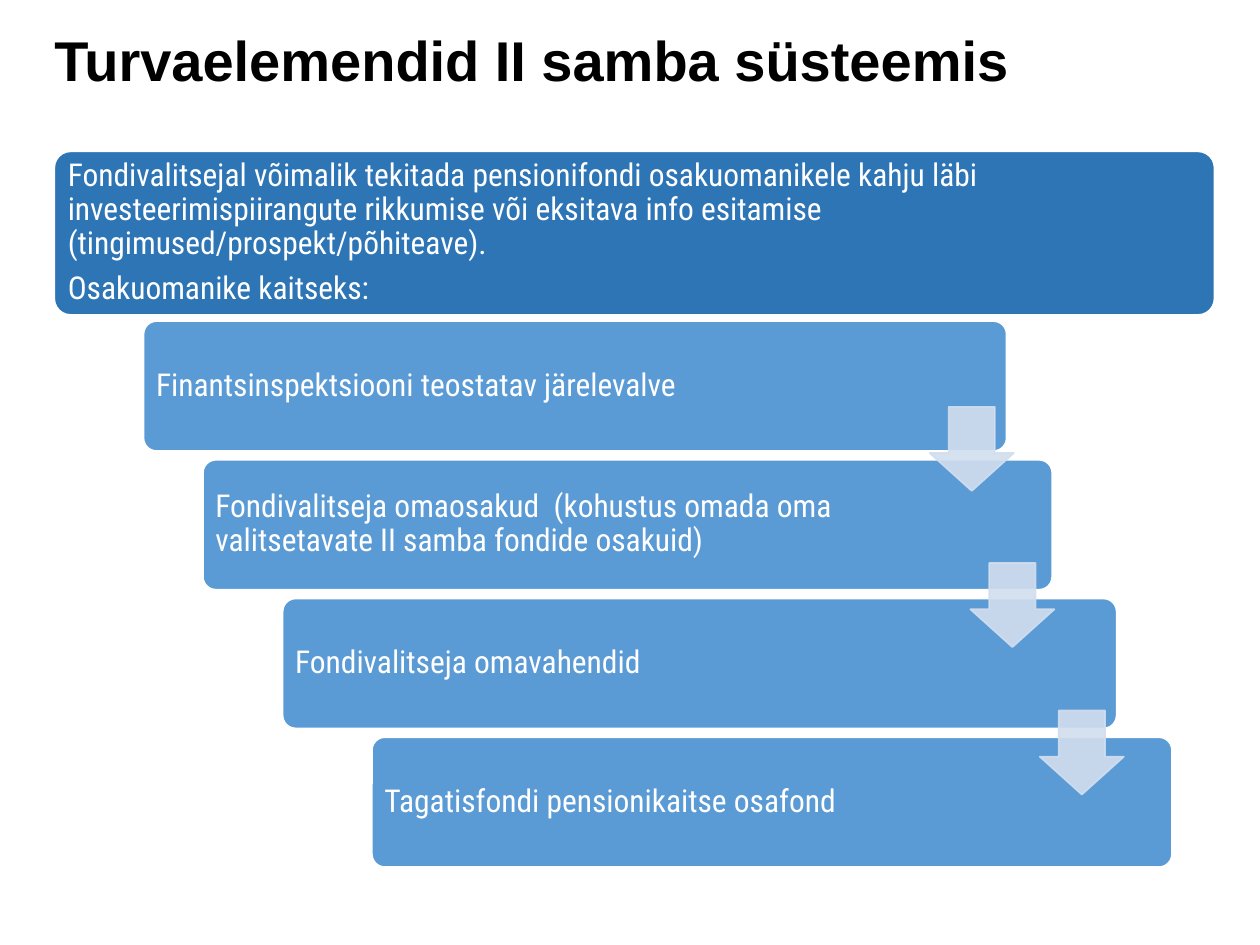
from dataclasses import dataclass

import pptx
import pptx.dml.color
import pptx.enum.shapes
import pptx.enum.text
import pptx.oxml.ns
import pptx.util
from lxml import etree

Pt = pptx.util.Pt
SHAPES = pptx.enum.shapes.MSO_SHAPE
ANCHORS = pptx.enum.text.MSO_ANCHOR


@dataclass(frozen=True)
class Theme:
    heading_font: str = "Arial"
    body_font: str = "Roboto Condensed"
    heading_size: float = 32
    body_size: float = 18
    black: str = "000000"
    white: str = "FFFFFF"
    risk_blue: str = "2E75B6"
    step_blue: str = "5B9BD5"
    arrow_blue: str = "D2DEEF"
    arrow_opacity: int = 90


THEME = Theme()

RISK = [
    "Fondivalitsejal võimalik tekitada pensionifondi osakuomanikele kahju läbi "
    "investeerimispiirangute rikkumise või eksitava info esitamise "
    "(tingimused/prospekt/põhiteave).",
    "Osakuomanike kaitseks:",
]

# Text, indent and width of each step, then the arrow's offset inside it.
SAFEGUARDS = [
    ("Finantsinspektsiooni teostatav järelevalve", 51, 493.2, (449.3, 49)),
    ("Fondivalitseja omaosakud  (kohustus omada oma valitsetavate II samba fondide osakuid)",
     85, 485.3, (438.5, 59)),
    ("Fondivalitseja omavahendid", 130.5, 476.6, (432.7, 64)),
    ("Tagatisfondi pensionikaitse osafond", 181.5, 457.2, None),
]


def rgb(value):
    return pptx.dml.color.RGBColor.from_string(value)


def write(frame, paragraphs, font, size, color, spacing, bold=False):
    frame.word_wrap = True
    frame.text = "\n".join(paragraphs)
    for paragraph in frame.paragraphs:
        paragraph.alignment = pptx.enum.text.PP_ALIGN.LEFT
        paragraph.line_spacing = spacing
        for run in paragraph.runs:
            run.font.name = font
            run.font.size = Pt(size)
            run.font.bold = bold
            run.font.color.rgb = rgb(color)


def add_filled(slide, preset, box, adjustments, fill, line):
    shape = slide.shapes.add_shape(preset, *map(Pt, box))
    for index, value in enumerate(adjustments):
        shape.adjustments[index] = value
    shape.shadow.inherit = False
    shape.fill.solid()
    shape.fill.fore_color.rgb = rgb(fill)
    shape.line.color.rgb = rgb(line)
    shape.line.width = Pt(1)
    return shape


def add_title(slide, box):
    title = slide.shapes.add_textbox(*map(Pt, box)).text_frame
    title.margin_left = title.margin_right = title.margin_bottom = 0
    title.margin_top = Pt(4.5)
    write(title, ["Turvaelemendid II samba süsteemis"], THEME.heading_font,
          THEME.heading_size, THEME.black, 0.88, bold=True)


def add_panel(slide, box, paragraphs, fill):
    """Rounded panel whose text keeps clear of the arrows on the right."""
    panel = add_filled(slide, SHAPES.ROUNDED_RECTANGLE, box, [0.1], fill, THEME.white)
    frame = panel.text_frame
    frame.margin_left = frame.margin_top = frame.margin_bottom = Pt(5)
    frame.margin_right = Pt(round(0.18 * box[2], 2))
    frame.vertical_anchor = ANCHORS.MIDDLE
    write(frame, paragraphs, THEME.body_font, THEME.body_size, THEME.white, 0.9)
    for paragraph in frame.paragraphs[:-1]:
        paragraph.space_after = Pt(0.35 * THEME.body_size)


def add_arrow(slide, left, top, size=48):
    arrow = add_filled(slide, SHAPES.DOWN_ARROW, (left, top, size, size),
                       [0.55, 0.45], THEME.arrow_blue, THEME.arrow_blue)
    properties = arrow.fill._xPr
    for color in properties.iter(pptx.oxml.ns.qn("a:srgbClr")):
        etree.SubElement(color, pptx.oxml.ns.qn("a:alpha"),
                         val=str(THEME.arrow_opacity * 1000))


def add_staircase(slide, box):
    """Steps of equal height, with arrows laid over the joints."""
    left, top, _, height = box
    gap = 5
    step_height = (height - gap * (len(SAFEGUARDS) - 1)) / len(SAFEGUARDS)
    arrows = []
    for index, (text, indent, width, arrow) in enumerate(SAFEGUARDS):
        step_left = left + indent
        step_top = top + index * (step_height + gap)
        add_panel(slide, (step_left, step_top, width, step_height), [text], THEME.step_blue)
        if arrow:
            arrows.append((step_left + arrow[0], step_top + arrow[1]))
    for arrow_left, arrow_top in arrows:
        add_arrow(slide, arrow_left, arrow_top)


def main():
    deck = pptx.Presentation()
    deck.slide_width, deck.slide_height = Pt(720), Pt(540)
    slide = deck.slides.add_slide(deck.slide_layouts[6])
    left, width = 31, 663
    add_title(slide, (left, 15, width, 73.5))
    add_panel(slide, (left, 86.5, width, 93.5), RISK, THEME.risk_blue)
    add_staircase(slide, (left, 183.5, width, 312))
    deck.save("out.pptx")


if __name__ == "__main__":
    main()
